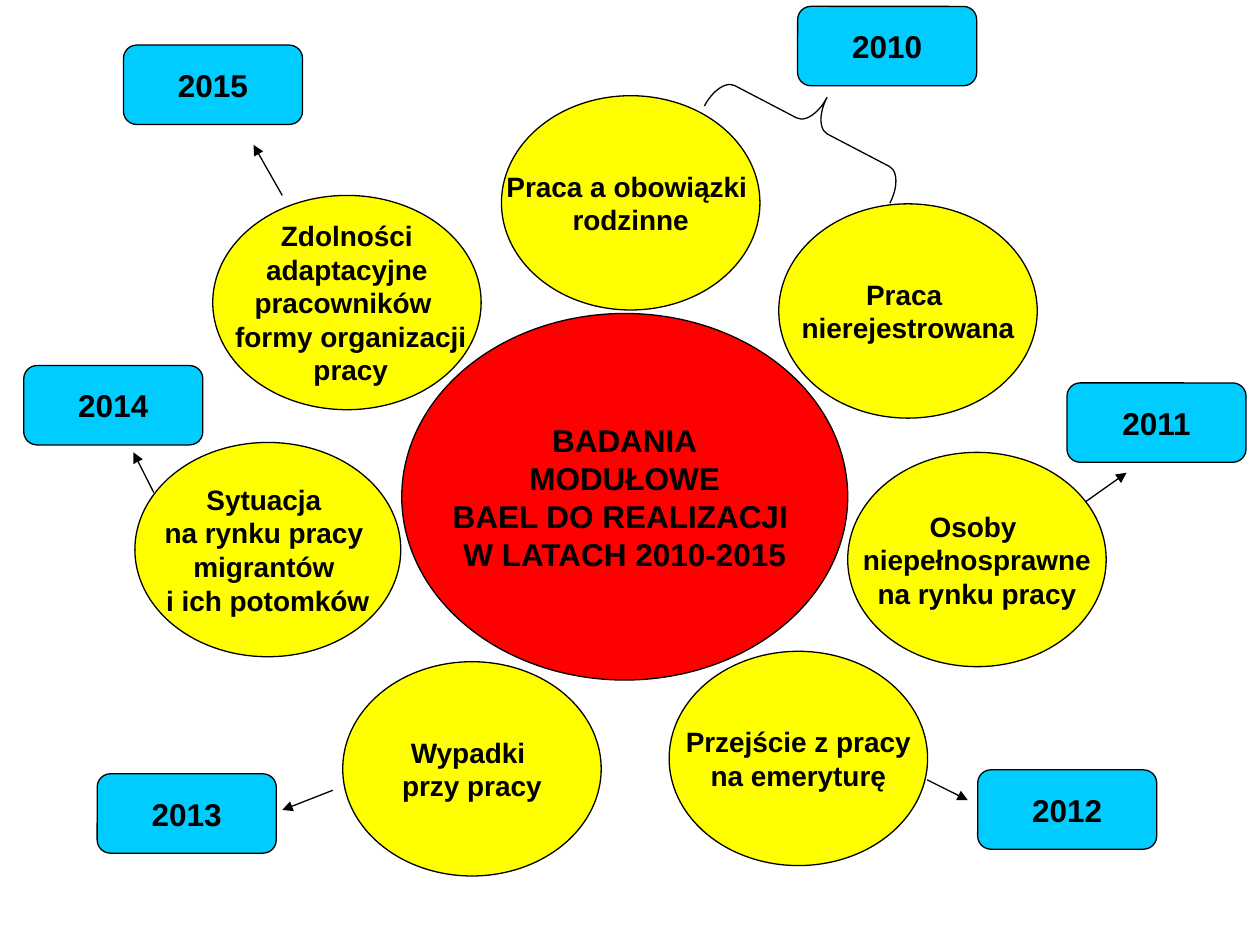
from dataclasses import dataclass

from lxml.etree import SubElement
from pptx import Presentation
from pptx.dml.color import RGBColor
from pptx.enum.shapes import MSO_CONNECTOR, MSO_SHAPE
from pptx.enum.text import MSO_ANCHOR, PP_ALIGN
from pptx.oxml.ns import qn
from pptx.util import Cm, Pt


@dataclass(frozen=True)
class Theme:
    survey: RGBColor = RGBColor(0xFF, 0x00, 0x00)
    topic: RGBColor = RGBColor(0xFF, 0xFF, 0x00)
    year: RGBColor = RGBColor(0x00, 0xCC, 0xFF)
    ink: RGBColor = RGBColor(0x00, 0x00, 0x00)
    font: str = "Arial"
    large: Pt = Pt(18)
    medium: Pt = Pt(16)
    outline: Pt = Pt(0.75)


TOPIC_WIDTH, TOPIC_HEIGHT = 5.21, 4.32
YEAR_SIZE = (3.61, 1.6)

TOPICS = [
    (10.11, 1.93, TOPIC_WIDTH, "Praca a obowiązki \nrodzinne"),
    (4.29, 3.94, 5.41,
     "Zdolności\n adaptacyjne \npracowników \n formy organizacji\n pracy"),
    (2.72, 8.92, 5.36, "Sytuacja \nna rynku pracy \nmigrantów \ni ich potomków"),
    (6.91, 13.34, TOPIC_WIDTH, "Wypadki \nprzy pracy"),
    (13.49, 13.13, TOPIC_WIDTH, "Przejście z pracy\nna emeryturę"),
    (17.09, 9.12, TOPIC_WIDTH, "Osoby \nniepełnosprawne\n na rynku pracy "),
    (15.7, 4.11, TOPIC_WIDTH, "Praca \nnierejestrowana"),
]

YEARS = {
    "2010": (16.08, 0.13),
    "2011": (21.51, 7.72),
    "2012": (19.71, 15.52),
    "2013": (1.96, 15.6),
    "2014": (0.48, 7.37),
    "2015": (2.49, 0.91),
}

TOPIC_TO_YEAR = [
    (21.89, 10.11, 22.71, 9.53),
    (18.69, 15.72, 19.51, 16.13),
    (6.71, 15.93, 5.69, 16.33),
    (3.1, 9.93, 2.69, 9.12),
    (5.69, 3.94, 5.11, 2.92),
]


class Diagram:
    def __init__(self, slide, theme):
        self.slide = slide
        self.theme = theme

    def apply(self, target, values):
        for name, value in values.items():
            setattr(target, name, value)

    def ink_line(self, line):
        line.color.rgb = self.theme.ink
        line.width = self.theme.outline

    def outline(self, preset, box):
        shape = self.slide.shapes.add_shape(preset, *map(Cm, box))
        shape.shadow.inherit = False
        self.ink_line(shape.line)
        return shape

    def label(self, preset, box, text, color, size):
        shape = self.outline(preset, box)
        shape.fill.solid()
        shape.fill.fore_color.rgb = color
        frame = shape.text_frame
        self.apply(frame, {
            "text": text,
            "word_wrap": False,
            "vertical_anchor": MSO_ANCHOR.MIDDLE,
        })
        for paragraph in frame.paragraphs:
            paragraph.alignment = PP_ALIGN.CENTER
            font = paragraph.runs[0].font
            self.apply(font, {"name": self.theme.font, "size": size, "bold": True})
            font.color.rgb = self.theme.ink

    def survey(self, box, text):
        self.label(MSO_SHAPE.OVAL, box, text, self.theme.survey, self.theme.large)

    def topic(self, left, top, width, text):
        self.label(MSO_SHAPE.OVAL, (left, top, width, TOPIC_HEIGHT), text,
                   self.theme.topic, self.theme.medium)

    def year(self, position, text):
        self.label(MSO_SHAPE.ROUNDED_RECTANGLE, position + YEAR_SIZE, text,
                   self.theme.year, self.theme.large)

    def arrow(self, ends):
        connector = self.slide.shapes.add_connector(
            MSO_CONNECTOR.STRAIGHT, *map(Cm, ends))
        self.ink_line(connector.line)
        SubElement(connector.get_or_add_ln(), qn("a:tailEnd"), type="triangle")
        SubElement(connector._element.spPr, qn("a:effectLst"))

    def brace(self, box, rotation, curl):
        brace = self.outline(MSO_SHAPE.LEFT_BRACE, box)
        brace.fill.background()
        brace.rotation = rotation
        brace.adjustments[0] = curl


def main():
    presentation = Presentation()
    presentation.slide_width, presentation.slide_height = Cm(25.4), Cm(19.05)
    slide = presentation.slides.add_slide(presentation.slide_layouts[6])
    diagram = Diagram(slide, Theme())

    diagram.survey((8.1, 6.32, 8.99, 7.39),
                   "BADANIA\nMODUŁOWE\nBAEL DO REALIZACJI \nW LATACH 2010-2015")
    for topic in TOPICS:
        diagram.topic(*topic)
    for year, position in YEARS.items():
        diagram.year(position, year)
    for ends in TOPIC_TO_YEAR:
        diagram.arrow(ends)
    diagram.brace((15.72, 0.43, 1.3, 4.22), rotation=117.6, curl=0.27)

    presentation.save("out.pptx")


if __name__ == "__main__":
    main()
